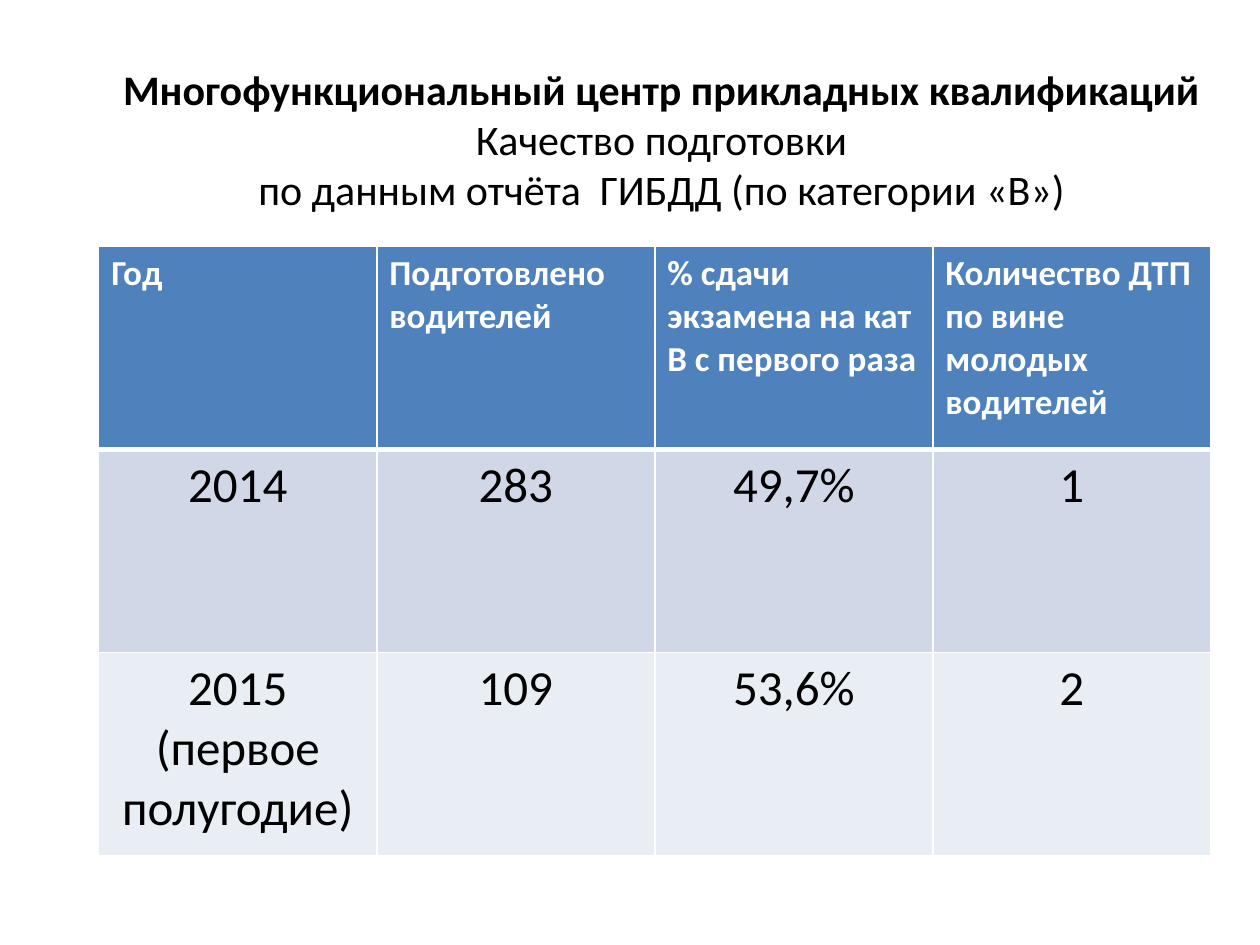
import pptx
import pptx.util
import pptx.dml.color
import pptx.enum.text
import pptx.oxml
import pptx.oxml.ns

Pt = pptx.util.Pt
Align = pptx.enum.text.PP_ALIGN


def color(code):
    return pptx.dml.color.RGBColor.from_string(code)


def write(par, text, size=24, bold=False, ink="000000", align=Align.CENTER):
    par.alignment = align
    run = par.add_run()
    run.text = text
    run.font.name = "Calibri"
    run.font.size = Pt(size)
    run.font.bold = bold
    run.font.color.rgb = color(ink)


deck = pptx.Presentation()
deck.slide_width, deck.slide_height = Pt(720), Pt(540)
slide = deck.slides.add_slide(deck.slide_layouts[6])

# Title
box = slide.shapes.add_textbox(Pt(60), Pt(34), Pt(636), Pt(106))
frame = box.text_frame
frame.word_wrap = True
frame.vertical_anchor = pptx.enum.text.MSO_ANCHOR.MIDDLE
frame.margin_bottom = Pt(19)
lines = [
    "Многофункциональный центр прикладных квалификаций",
    "Качество подготовки",
    "по данным отчёта  ГИБДД (по категории «В»)",
]
for i, line in enumerate(lines):
    par = frame.add_paragraph() if i else frame.paragraphs[0]
    write(par, line, bold=i == 0)

# Table of results by year
rows = [
    ["Год", "Подготовлено водителей", "% сдачи экзамена на кат В с первого раза",
     "Количество ДТП по вине молодых водителей"],
    ["2014", "283", "49,7%", "1"],
    ["2015 (первое полугодие)", "109", "53,6%", "2"],
]
fills = ["4F81BD", "D0D8E8", "E9EDF4"]
head = dict(size=20, bold=True, ink="FFFFFF", align=Align.LEFT)
body = dict(size=28)
table = slide.shapes.add_table(3, 4, Pt(56.4), Pt(140.7), Pt(635.6), Pt(348.3)).table
for col in table.columns:
    col.width = Pt(158.9)
for row in table.rows:
    row.height = Pt(116.1)

for r, texts in enumerate(rows):
    for c, text in enumerate(texts):
        cell = table.cell(r, c)
        write(cell.text_frame.paragraphs[0], text, **(body if r else head))
        # White borders, thick below the header
        props = cell._tc.get_or_add_tcPr()
        for side in "LRTB":
            thick = (r, side) in [(0, "B"), (1, "T")]
            props.append(pptx.oxml.parse_xml(
                f'<a:ln{side} {pptx.oxml.ns.nsdecls("a")} w="{Pt(3 if thick else 1)}">'
                f'<a:solidFill><a:srgbClr val="FFFFFF"/></a:solidFill></a:ln{side}>'))
        cell.fill.solid()
        cell.fill.fore_color.rgb = color(fills[r])

deck.save("out.pptx")
